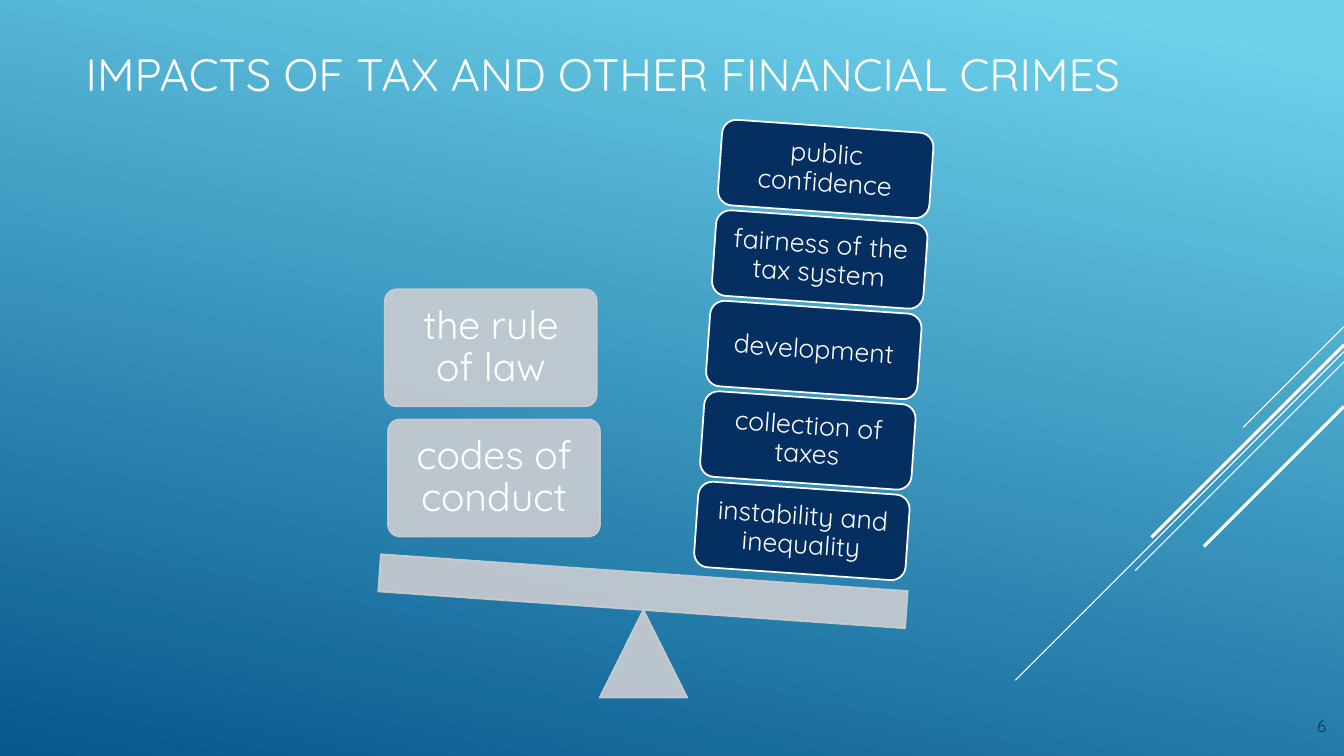
from dataclasses import dataclass
from typing import Any

from lxml import etree
from pptx import Presentation
from pptx import util as u
from pptx.dml.color import RGBColor
from pptx.enum import shapes, text
from pptx.oxml.ns import qn


@dataclass(frozen=True)
class Theme:
    font: str = "Quicksand"
    white: str = "FFFFFF"
    grey: str = "CCCDD2"
    navy: str = "052F61"
    ink: str = "0A304A"
    light: str = "6ED2EB"
    deep: str = "06588E"
    title: float = 32.4
    large: float = 28
    small: float = 19
    page: float = 12
    edge: float = 1.25


@dataclass(frozen=True)
class Part:
    kind: Any
    left: float
    top: float
    width: float
    height: float
    fill: str
    line: str
    label: str = ""
    size: float = 0
    pad: float = 0
    tilt: float = 0
    alpha: int = 100
    round: float | None = None


@dataclass(frozen=True)
class Streak:
    top: float
    run: float
    weight: float


look = Theme()
KIND = shapes.MSO_SHAPE
WIDTH, HEIGHT, TILT = 33.87, 19.05, 4

STREAKS = [
    Streak(8.23, 2.54, 0.75),
    Streak(8.86, 8.28, 0.75),
    Streak(9.12, 5.26, 0.75),
    Streak(8.69, 4.85, 2.25),
    Streak(10.24, 3.53, 2.25),
]
RULES = ["the rule of law", "codes of conduct"]
IMPACTS = [
    "public confidence",
    "fairness of the tax system",
    "development",
    "collection of taxes",
    "instability and inequality",
]


def put(item: Any, **values: Any) -> None:
    for name, value in values.items():
        setattr(item, name, value)


def place(item: Any, left: float, top: float, width: float, height: float) -> None:
    put(item, left=u.Cm(left), top=u.Cm(top), width=u.Cm(width), height=u.Cm(height))


def write(item: Any, words: str, size: float, color: str, align: Any,
          anchor: Any, pad: float, gap: float = 1) -> None:
    frame = item.text_frame
    sides = ("left", "right", "top", "bottom")
    put(frame, text=words, word_wrap=True, auto_size=text.MSO_AUTO_SIZE.NONE,
        vertical_anchor=anchor, **{f"margin_{side}": u.Cm(pad) for side in sides})
    line = frame.paragraphs[0]
    put(line, alignment=align, line_spacing=gap)
    font = line.runs[0].font
    put(font, name=look.font, size=u.Pt(size), bold=False)
    font.color.rgb = RGBColor.from_string(color)


def fade(fill: Any, color: str, alpha: int) -> None:
    fill.solid()
    fill.fore_color.rgb = RGBColor.from_string(color)
    if alpha < 100:
        for node in fill._xPr.findall(f"{qn('a:solidFill')}/{qn('a:srgbClr')}"):
            etree.SubElement(node, qn("a:alpha"), val=str(alpha * 1000))


def draw(slide: Any, part: Part) -> None:
    item = slide.shapes.add_shape(part.kind, 0, 0, 0, 0)
    place(item, part.left, part.top, part.width, part.height)
    item.rotation = part.tilt
    item.shadow.inherit = False
    if part.round is not None:
        item.adjustments[0] = part.round
    fade(item.fill, part.fill, part.alpha)
    fade(item.line.fill, part.line, part.alpha)
    item.line.width = u.Pt(look.edge)
    if part.label:
        write(item, part.label, part.size, look.white, text.PP_ALIGN.CENTER,
              text.MSO_ANCHOR.MIDDLE, part.pad, 0.9)


def streak(slide: Any, ray: Streak) -> None:
    item = slide.shapes.add_connector(
        shapes.MSO_CONNECTOR.STRAIGHT, u.Cm(WIDTH), u.Cm(ray.top),
        u.Cm(WIDTH - ray.run), u.Cm(ray.top + ray.run))
    item.line.color.rgb = RGBColor.from_string(look.white)
    item.line.width = u.Pt(ray.weight)
    etree.SubElement(item._element.spPr, qn("a:effectLst"))


def paint(slide: Any) -> None:
    fill = slide.background.fill
    fill.gradient()
    fill.gradient_angle = 258
    for stop, color, spot in zip(fill.gradient_stops, (look.light, look.deep), (0.05, 1)):
        stop.color.rgb = RGBColor.from_string(color)
        stop.position = spot


def parts() -> list[Part]:
    pale = dict(fill=look.grey, line=look.grey, alpha=90)
    rules = [
        Part(KIND.ROUNDED_RECTANGLE, 9.7 + 0.08 * row, 7.29 + 3.28 * row, 5.34, 2.95,
             label=label, size=look.large, pad=0.39, round=0.1, **pale)
        for row, label in enumerate(RULES)
    ]
    scale = [
        Part(KIND.ISOSCELES_TRIANGLE, 15.11, 15.37, 2.21, 2.21, **pale),
        Part(KIND.RECTANGLE, 9.55, 14.43, 13.31, 0.94, tilt=TILT, **pale),
    ]
    impacts = [
        Part(KIND.ROUNDED_RECTANGLE, 18.14 - 0.15 * row, 3.18 + 2.28 * row, 5.34, 2.16,
             look.navy, look.white, label, look.small, 0.3, TILT)
        for row, label in enumerate(IMPACTS)
    ]
    return rules + scale + impacts


def main() -> None:
    deck = Presentation()
    put(deck, slide_width=u.Cm(WIDTH), slide_height=u.Cm(HEIGHT))
    slide = deck.slides.add_slide(deck.slide_layouts[5])
    paint(slide)
    for ray in STREAKS:
        streak(slide, ray)
    title = slide.shapes.title
    place(title, 1.91, 1.14, 30.28, 1.42)
    write(title, "IMPACTS OF TAX AND OTHER FINANCIAL CRIMES", look.title, look.white,
          text.PP_ALIGN.LEFT, text.MSO_ANCHOR.MIDDLE, 0.25)
    for part in parts():
        draw(slide, part)
    page = slide.shapes.add_textbox(0, 0, 0, 0)
    place(page, 32.64, 17.81, 0.91, 0.86)
    write(page, "6", look.page, look.ink, text.PP_ALIGN.RIGHT, text.MSO_ANCHOR.BOTTOM, 0.13)
    deck.save("out.pptx")


if __name__ == "__main__":
    main()
